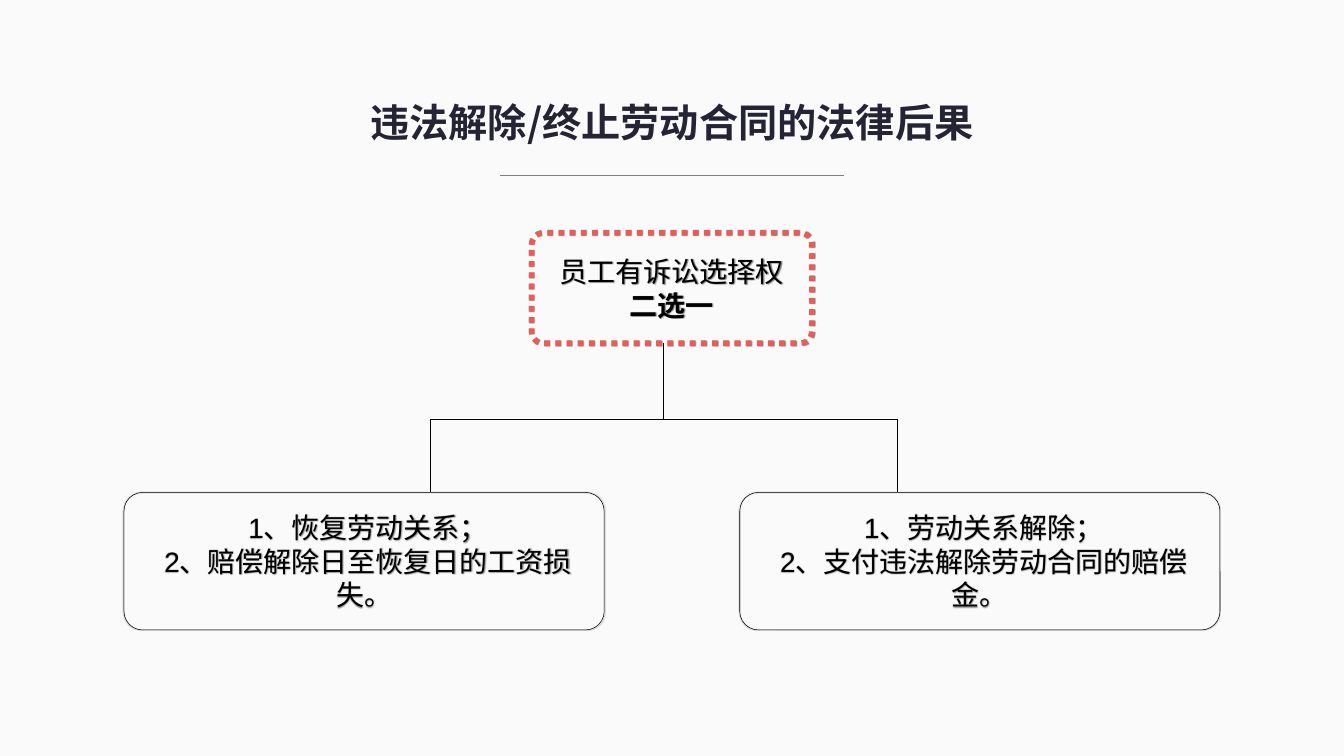
from lxml import etree
from pptx import Presentation
from pptx import util as u
from pptx.dml.color import RGBColor
from pptx.enum import dml, shapes, text
from pptx.oxml import parse_xml
from pptx.oxml.ns import nsdecls, qn

WIDTH, HEIGHT = 26.67, 15
CENTRE = WIDTH / 2
TRUNK_X = 13.17
BRANCH_REACH = 4.63
CHOICE_BOX = (10.55, 4.62, 5.56, 2.19)
OUTCOME_TOP, OUTCOME_W, OUTCOME_H = 9.77, 9.53, 2.73
OUTCOME_MARGIN = 2.46


def colour(value):
    return RGBColor.from_string(value)


def inches(*lengths):
    return [u.Inches(length) for length in lengths]


def style_line(line, value, points):
    line.color.rgb = colour(value)
    line.width = u.Pt(points)


def write(frame, lines, font, size, value, margin):
    """Fill a text frame with centred paragraphs in one font."""
    frame.word_wrap = True
    frame.margin_left = frame.margin_right = u.Inches(margin)
    frame.margin_top = frame.margin_bottom = u.Inches(margin)
    frame.text = "\n".join(lines)
    for paragraph in frame.paragraphs:
        paragraph.alignment = text.PP_ALIGN.CENTER
        # Closing punctuation wraps instead of hanging past the margin.
        paragraph._p.get_or_add_pPr().set("hangingPunct", "0")
        paragraph.font.name = font
        paragraph.font.size = u.Pt(size)
        paragraph.font.color.rgb = colour(value)


def heading(slide, box, wording):
    title = slide.shapes.title
    title.left, title.top, title.width, title.height = inches(*box)
    frame = title.text_frame
    write(frame, [wording], "Noto Sans CJK SC", 56, "252434", 0.1)
    frame.vertical_anchor = text.MSO_ANCHOR.TOP
    frame.auto_size = text.MSO_AUTO_SIZE.SHAPE_TO_FIT_TEXT
    paragraph = frame.paragraphs[0]
    paragraph.font.bold = True
    latin = paragraph._p.find(".//" + qn("a:latin"))
    latin.addnext(parse_xml(
        f'<a:ea {nsdecls("a")} typeface="Noto Sans CJK SC"/>'))


def card(slide, box, lines, corner, line_colour, line_width):
    """Unfilled rounded box whose text and outline cast a soft shadow."""
    shape = slide.shapes.add_shape(
        shapes.MSO_SHAPE.ROUNDED_RECTANGLE, *inches(*box))
    shape.adjustments[0] = corner
    shape.fill.background()
    style_line(shape.line, line_colour, line_width)
    shape._element.spPr.append(parse_xml(
        f'<a:effectLst {nsdecls("a")}>'
        '<a:outerShdw blurRad="12700" dist="0" dir="5400000" rotWithShape="0">'
        '<a:srgbClr val="000000"><a:alpha val="50000"/></a:srgbClr>'
        '</a:outerShdw></a:effectLst>'))
    write(shape.text_frame, lines, "Arial", 40, "000000", 0.04)
    shape.text_frame.vertical_anchor = text.MSO_ANCHOR.MIDDLE
    return shape


def connector(slide, kind, ends, value, points):
    line = slide.shapes.add_connector(kind, *inches(*ends))
    style_line(line.line, value, points)
    etree.SubElement(line._element.spPr, qn("a:effectLst"))
    return line


def branch(slide, side):
    """Elbow down from the choice box; side is -1 for left, 1 for right."""
    top = CHOICE_BOX[1] + CHOICE_BOX[3]
    drop = OUTCOME_TOP - top
    middle_x = TRUNK_X + side * BRANCH_REACH / 2
    middle_y = top + drop / 2
    # The elbow is laid out sideways, then turned a quarter to run downwards.
    ends = (middle_x + side * drop / 2, middle_y - BRANCH_REACH / 2,
            middle_x - side * drop / 2, middle_y + BRANCH_REACH / 2)
    elbow = connector(slide, shapes.MSO_CONNECTOR.ELBOW, ends, "000000", 0.75)
    properties = elbow._element.spPr
    properties.find(qn("a:xfrm")).set(
        "rot", str((90 if side < 0 else 270) * 60000))
    guides = properties.find(qn("a:prstGeom")).find(qn("a:avLst"))
    etree.SubElement(guides, qn("a:gd"), name="adj1", fmla="val 51000")


def decision_tree(slide, choice, outcomes):
    choice_card = card(slide, CHOICE_BOX, choice, 0.107, "EC5C57", 8)
    choice_card.line.dash_style = dml.MSO_LINE.ROUND_DOT
    choice_card.text_frame.paragraphs[1].font.bold = True
    lefts = (OUTCOME_MARGIN, WIDTH - OUTCOME_MARGIN - OUTCOME_W)
    for left, side, lines in zip(lefts, (-1, 1), outcomes):
        card(slide, (left, OUTCOME_TOP, OUTCOME_W, OUTCOME_H), lines,
             0.136, "000000", 0.75)
        branch(slide, side)


def main():
    deck = Presentation()
    deck.slide_width, deck.slide_height = inches(WIDTH, HEIGHT)
    slide = deck.slides.add_slide(deck.slide_layouts.get_by_name("Title Only"))
    slide.background.fill.solid()
    slide.background.fill.fore_color.rgb = colour("FAFAFA")

    heading(slide, (CENTRE - 7.65, 1.86, 15.3, 1.28),
            "违法解除/终止劳动合同的法律后果")
    connector(slide, shapes.MSO_CONNECTOR.STRAIGHT,
              (CENTRE + 3.41, 3.48, CENTRE - 3.41, 3.48), "808080", 1)
    decision_tree(
        slide,
        ["员工有诉讼选择权", "二选一"],
        [[" 1、恢复劳动关系；", " 2、赔偿解除日至恢复日的工资损失。"],
         [" 1、劳动关系解除；", " 2、支付违法解除劳动合同的赔偿金。"]])
    deck.save("out.pptx")


if __name__ == "__main__":
    main()
